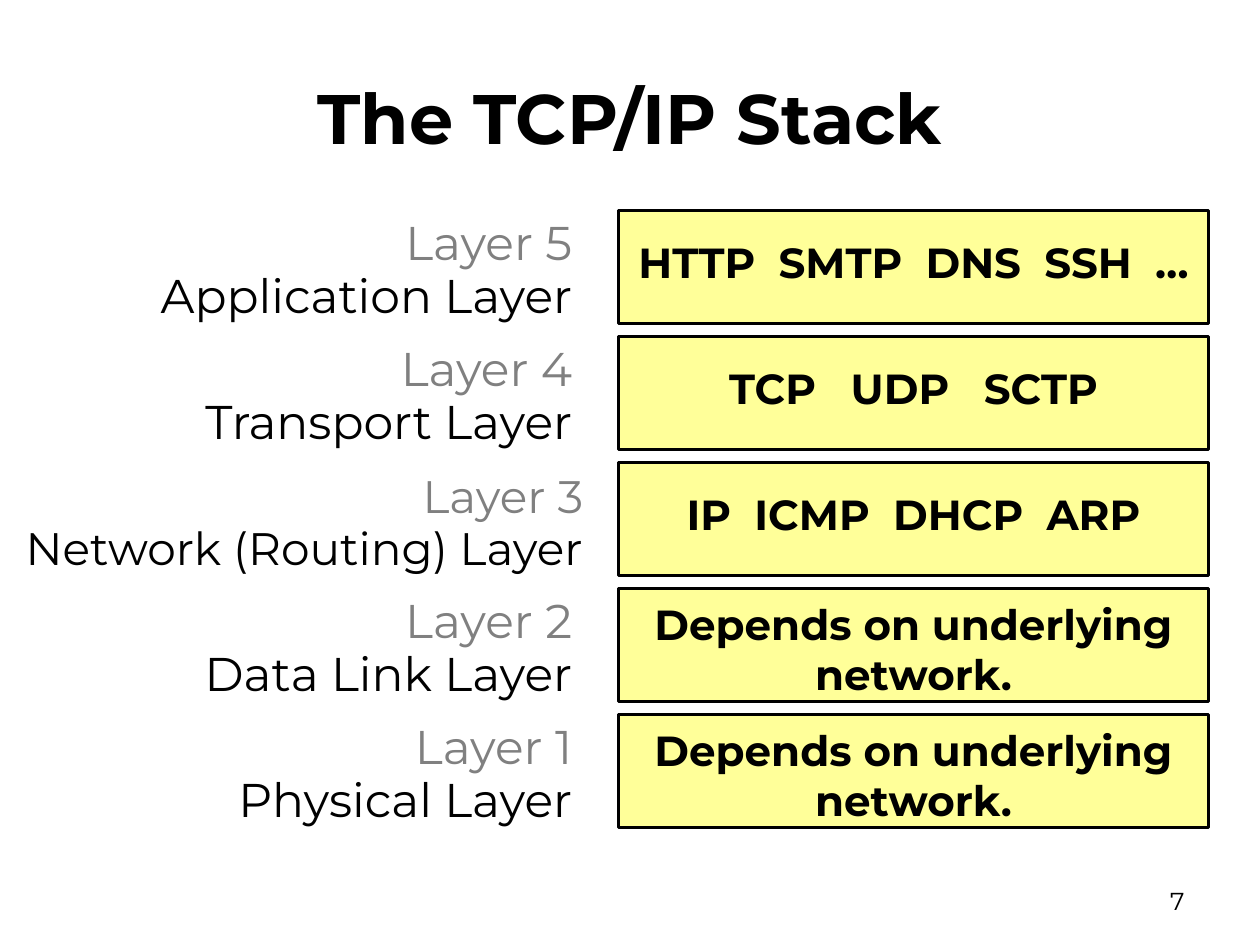
from pptx import Presentation
from pptx.dml.color import RGBColor
from pptx.enum.shapes import MSO_SHAPE
from pptx.enum.text import MSO_ANCHOR, PP_ALIGN
from pptx.util import Inches, Pt

TITLE = "The TCP/IP Stack"
PAGE_NUMBER = "7"
LOWER_LAYER_NOTE = ["Depends on underlying network."]
LAYERS = [
    {"number": 5, "name": "Application Layer", "contents": ["HTTP", "SMTP", "DNS", "SSH", "…"], "gap": 6.5},
    {"number": 4, "name": "Transport Layer", "contents": ["TCP", "UDP", "SCTP"], "gap": 13},
    {"number": 3, "name": "Network (Routing) Layer", "contents": ["IP", "ICMP", "DHCP", "ARP"], "gap": 6.5,
     "label_left": -0.13, "label_width": 4.88, "label_size": 26},
    {"number": 2, "name": "Data Link Layer", "contents": LOWER_LAYER_NOTE},
    {"number": 1, "name": "Physical Layer", "contents": LOWER_LAYER_NOTE},
]

FONT = "Montserrat"
BLACK = RGBColor(0x00, 0x00, 0x00)
GRAY = RGBColor(0x80, 0x80, 0x80)
YELLOW = RGBColor(0xFF, 0xFF, 0x99)

FIRST_TOP = 1.67
ROW_PITCH = 1
BOX_LEFT, BOX_WIDTH, BOX_HEIGHT = 4.91, 4.68, 0.9


def add_text_box(slide, left, top, width, height, alignment, anchor=MSO_ANCHOR.TOP):
    text_box = slide.shapes.add_textbox(Inches(left), Inches(top), Inches(width), Inches(height))
    text_frame = text_box.text_frame
    text_frame.word_wrap = True
    text_frame.vertical_anchor = anchor
    paragraph = text_frame.paragraphs[0]
    paragraph.alignment = alignment
    return text_frame, paragraph


def add_run(paragraph, text, size, color=BLACK, bold=False):
    run = paragraph.add_run()
    run.text = text
    run.font.name = FONT
    run.font.size = Pt(size)
    run.font.bold = bold
    run.font.color.rgb = color
    return run


def add_layer_box(slide, top):
    shape = slide.shapes.add_shape(
        MSO_SHAPE.RECTANGLE, Inches(BOX_LEFT), Inches(top), Inches(BOX_WIDTH), Inches(BOX_HEIGHT))
    shape.shadow.inherit = False
    shape.fill.solid()
    shape.fill.fore_color.rgb = YELLOW
    shape.line.color.rgb = BLACK
    shape.line.width = Pt(2)


def add_layer_label(slide, layer, top):
    text_frame, paragraph = add_text_box(
        slide, layer.get("label_left", 0.83), top, layer.get("label_width", 3.83), 0.97, PP_ALIGN.RIGHT)
    text_frame.margin_left = text_frame.margin_right = Inches(0.12)
    text_frame.margin_top = text_frame.margin_bottom = Inches(0.06)
    paragraph.line_spacing = Pt(30)
    size = layer.get("label_size", 27)
    add_run(paragraph, f"Layer {layer['number']}", size, GRAY)
    paragraph.add_line_break()
    add_run(paragraph, layer["name"], size)


def add_layer_contents(slide, layer, top):
    offset = 0.16 if "gap" in layer else 0.03
    _, paragraph = add_text_box(slide, BOX_LEFT, top + offset, BOX_WIDTH, 0.5, PP_ALIGN.CENTER)
    for index, item in enumerate(layer["contents"]):
        if index:
            space = add_run(paragraph, " ", 24, bold=True)
            space.font._element.set("spc", str(round(layer["gap"] * 100)))
        add_run(paragraph, item, 24, bold=True)


def main():
    presentation = Presentation()
    presentation.slide_width = Inches(10)
    presentation.slide_height = Inches(7.5)
    slide = presentation.slides.add_slide(presentation.slide_layouts[6])

    _, title = add_text_box(slide, 0.5, 0.3, 9, 1.25, PP_ALIGN.CENTER, MSO_ANCHOR.MIDDLE)
    add_run(title, TITLE, 40, bold=True)

    for index, layer in enumerate(LAYERS):
        top = FIRST_TOP + index * ROW_PITCH
        add_layer_box(slide, top)
        add_layer_label(slide, layer, top)
        add_layer_contents(slide, layer, top)

    _, page_number = add_text_box(slide, 7.17, 6.95, 2.33, 0.4, PP_ALIGN.RIGHT, MSO_ANCHOR.MIDDLE)
    add_run(page_number, PAGE_NUMBER, 14)

    presentation.save("out.pptx")


if __name__ == "__main__":
    main()
